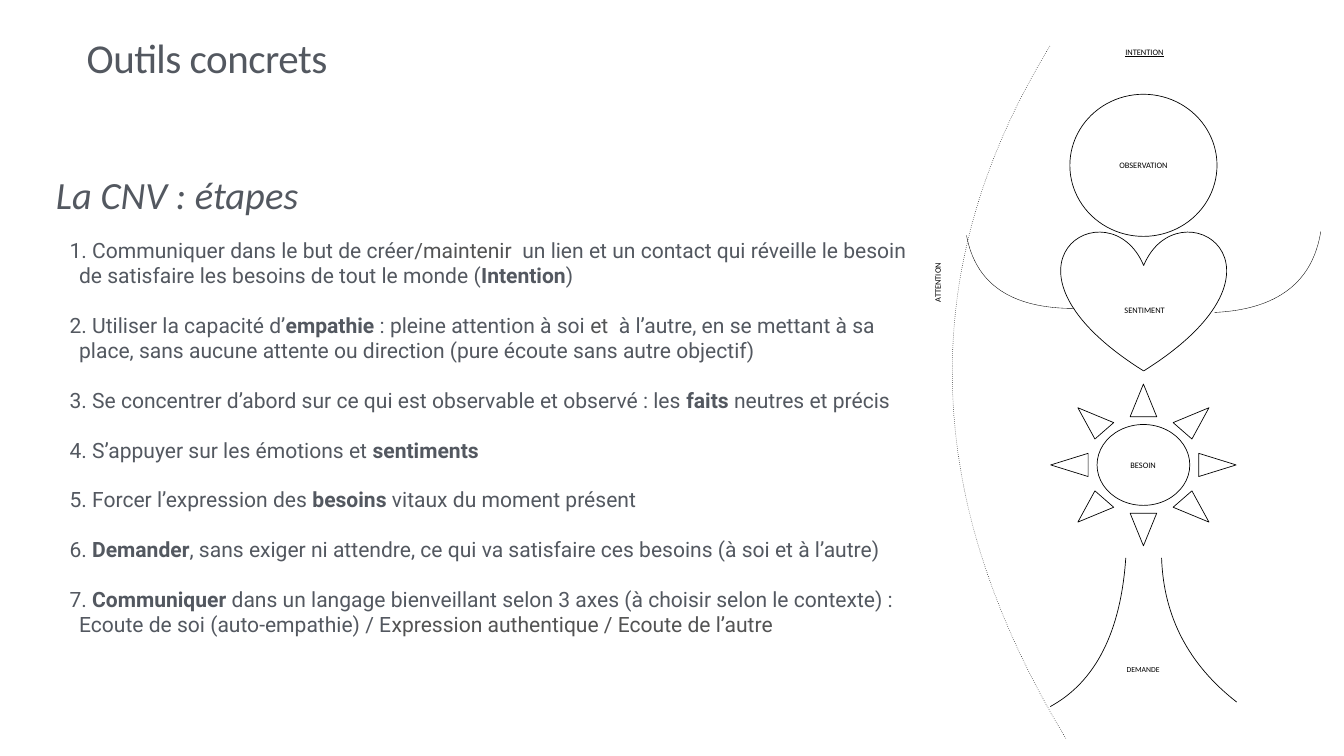
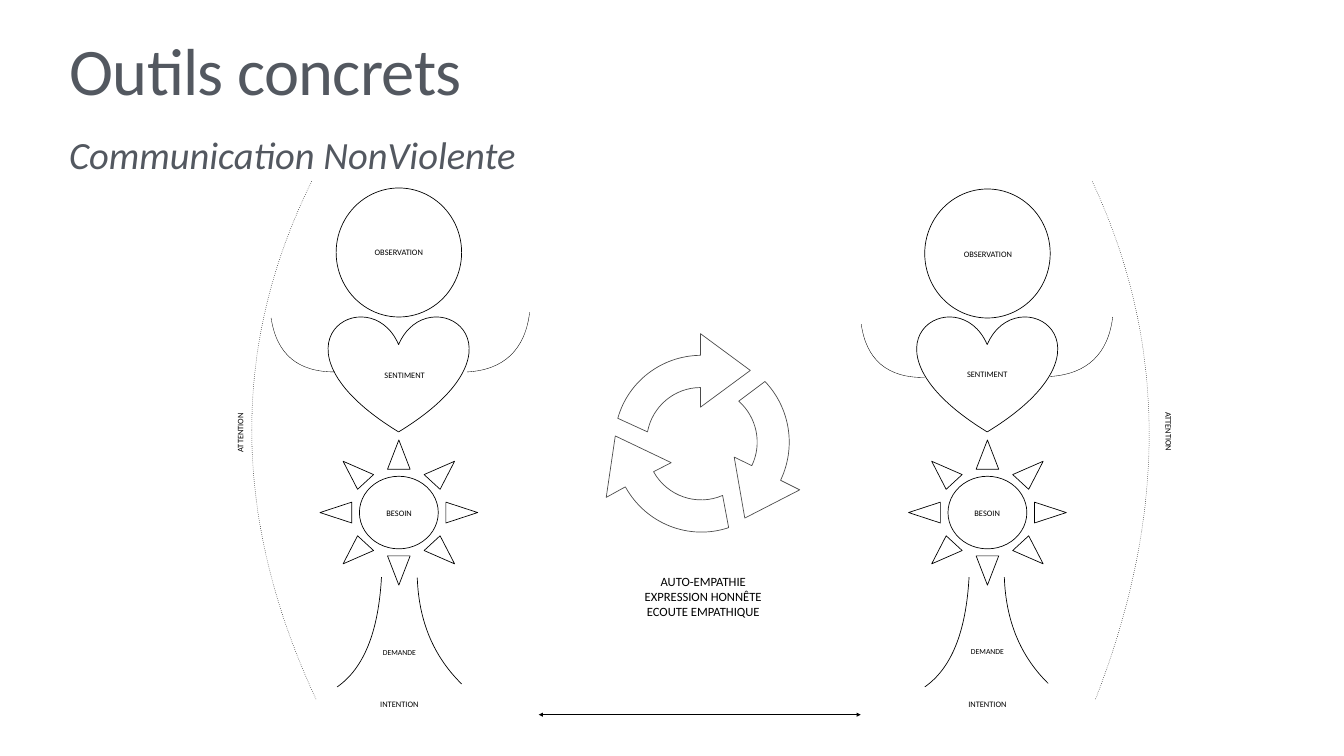
from lxml import etree
from pptx import Presentation
from pptx import util as u
from pptx.dml.color import RGBColor
from pptx.enum import shapes, text
from pptx.oxml.ns import qn

COLOURS = {"heading": "535860", "dark": "535353", "ink": "000000", "paper": "FFFFFF"}
BODY_STYLES = {"plain": ("heading", False), "bold": ("heading", True),
               "dark": ("dark", False), "ink": ("ink", False)}
CURVE_STEPS = 32


def add_text(slide, box, paragraphs, size, font="Calibri", inset=0.06, label=False):
    shape = slide.shapes.add_textbox(*map(u.Inches, box))
    frame = shape.text_frame
    frame.word_wrap = True
    frame.margin_left = frame.margin_right = u.Inches(inset)
    frame.margin_top = frame.margin_bottom = u.Inches(inset)
    frame.vertical_anchor = text.MSO_ANCHOR.MIDDLE if label else text.MSO_ANCHOR.TOP
    for index, runs in enumerate(paragraphs):
        paragraph = frame.paragraphs[0] if index == 0 else frame.add_paragraph()
        paragraph.alignment = text.PP_ALIGN.CENTER if label else text.PP_ALIGN.LEFT
        for wording, style in runs:
            colour, bold = BODY_STYLES[style]
            run = paragraph.add_run()
            run.text = wording
            run.font.name = font
            run.font.size = u.Pt(size)
            run.font.bold = bold
            run.font.color.rgb = RGBColor.from_string(COLOURS[colour])
    return shape


def add_outline(slide, contours, weight, closed=False):
    builder = None
    for start, *segments in contours:
        points = []
        pen = start
        for segment in segments:
            if len(segment) == 2:
                points.append(segment)
            else:
                knots = [pen, segment[:2], segment[2:4], segment[4:]]
                for step in range(1, CURVE_STEPS + 1):
                    t = step / CURVE_STEPS
                    weights = ((1 - t) ** 3, 3 * t * (1 - t) ** 2, 3 * t * t * (1 - t), t ** 3)
                    points.append(tuple(sum(w * knot[axis] for w, knot in zip(weights, knots))
                                        for axis in (0, 1)))
            pen = segment[-2:]
        corner = [u.Inches(value) for value in start]
        if builder is None:
            builder = slide.shapes.build_freeform(*corner, scale=1.0)
        else:
            builder.move_to(*corner)
        builder.add_line_segments([(u.Inches(x), u.Inches(y)) for x, y in points], close=closed)
    shape = builder.convert_to_shape()
    strokes = iter(list(shape._element.iter(qn("a:lnTo"))))
    for start, *segments in contours:
        for segment in segments:
            stroke = next(strokes)
            if len(segment) == 6:
                curve = etree.Element(qn("a:cubicBezTo"))
                for x, y in zip(segment[::2], segment[1::2]):
                    etree.SubElement(curve, qn("a:pt"), x=str(u.Inches(x) - shape.left),
                                     y=str(u.Inches(y) - shape.top))
                stroke.addprevious(curve)
                for spare in [stroke] + [next(strokes) for _ in range(CURVE_STEPS - 1)]:
                    spare.getparent().remove(spare)
    shape.shadow.inherit = False
    shape.fill.background()
    shape.line.color.rgb = RGBColor.from_string(COLOURS["ink"])
    shape.line.width = u.Pt(weight)
    return shape


presentation = Presentation()
presentation.slide_width = u.Inches(26.67)
presentation.slide_height = u.Inches(15)
steps_slide, exchange_slide = [
    presentation.slides.add_slide(presentation.slide_layouts[6]) for _ in range(2)]

headings = [
    (steps_slide, (1.66, 0.69, 23.69, 1.18), 58.6, -70,
     "La CNV : étapes", (1.06, 3.34, 24.03, 1.1)),
    (exchange_slide, (1.32, 0.69, 24.03, 1.85), 95, -100,
     "Communication NonViolente", (1.32, 2.55, 24.03, 1.1)),
]
for slide, title_box, title_size, tracking, subtitle, subtitle_box in headings:
    shape = add_text(slide, subtitle_box, [[(subtitle, "plain")]], 55, inset=0.05)
    shape.text_frame.paragraphs[0].runs[0].font.italic = True
    shape = add_text(slide, title_box, [[("Outils concrets", "plain")]], title_size)
    paragraph = shape.text_frame.paragraphs[0]
    paragraph.line_spacing = 0.9
    paragraph.runs[0].font._element.set("spc", str(tracking))

steps = [
    [(" Communiquer dans le but de créer", "plain"), ("/maintenir  ", "dark"),
     ("un lien et un contact qui réveille le besoin de satisfaire les besoins "
      "de tout le monde (", "plain"), ("Intention", "bold"), (")", "plain")],
    [(" Utiliser la capacité d’", "plain"), ("empathie", "bold"),
     (" : pleine attention à soi ", "plain"), ("et ", "dark"),
     (" à l’autre, en se mettant à sa place, sans aucune attente ou direction "
      "(pure écoute sans autre objectif)", "plain")],
    [(" Se concentrer d’abord sur ce qui est observable et observé : les ", "plain"),
     ("faits", "bold"), (" neutres et précis", "plain")],
    [(" S’appuyer sur les émotions et ", "plain"), ("sentiments", "bold")],
    [(" Forcer l’expression des ", "plain"), ("besoins ", "bold"),
     ("vitaux du moment présent", "plain")],
    [(" ", "plain"), ("Demander", "bold"),
     (", sans exiger ni attendre, ce qui va satisfaire ces besoins "
      "(à soi et à l’autre)", "plain")],
    [(" ", "plain"), ("Communiquer ", "bold"),
     ("dans un langage bienveillant selon 3 axes (à choisir selon le contexte) : "
      "Ecoute de soi (auto-empathie) / E", "plain"),
     ("xpression authentique / Ecoute de l’autre", "dark")],
]
shape = add_text(steps_slide, (1.32, 4.65, 16.89, 9.03), steps, 30.1, font="Roboto")
for paragraph in shape.text_frame.paragraphs:
    paragraph.space_before = u.Pt(34.9)
    properties = paragraph._p.get_or_add_pPr()
    properties.set("marL", str(u.Inches(0.19)))
    properties.set("indent", str(u.Inches(-0.19)))
    etree.SubElement(properties, qn("a:buAutoNum"), type="arabicPeriod")

figures = [
    {
        "slide": steps_slide,
        "head": (21.23, 1.87, 2.92, 2.82),
        "heart": (21.06, 4.57, 3.27, 2.79),
        "sun": (20.85, 7.62, 3.68, 3.21),
        "legs": [((20.84, 14.02), (21.74, 13.53, 22.24, 12.54, 22.34, 11.07)),
                 ((24.54, 13.93), (23.59, 13.19, 23.09, 12.24, 23.05, 11.07))],
        "arms": [((19.18, 4.67), (19.36, 5.64, 20.07, 6.12, 21.32, 6.12)),
                 ((24.1, 6.2), (25.35, 6.14, 26.05, 5.6, 26.21, 4.59))],
        "attention": ((21.15, 14.65), (18.25, 9.87, 18.15, 5.29, 20.85, 0.89)),
        "labels": {"OBSERVATION": (21.32, 3.15, 2.74, 0.27),
                   "SENTIMENT": (21.08, 6.02, 3.27, 0.27),
                   "BESOIN": (22.03, 9.09, 1.31, 0.27),
                   "DEMANDE": (21.66, 13.14, 2.05, 0.29),
                   "INTENTION": (21.17, 0.88, 3.08, 0.3),
                   "ATTENTION": (14.54, 5.47, 8.13, 0.27)},
        "turn": 270,
    },
    {
        "slide": exchange_slide,
        "head": (6.67, 3.73, 2.49, 2.56),
        "heart": (6.52, 6.26, 2.78, 2.31),
        "sun": (6.35, 8.73, 3.13, 2.88),
        "legs": [((6.69, 13.63), (7.22, 13.26, 7.51, 12.54, 7.57, 11.45)),
                 ((9.16, 13.57), (8.6, 13.02, 8.31, 12.32, 8.28, 11.46))],
        "arms": [((5.38, 6.31), (5.49, 7.03, 5.91, 7.38, 6.64, 7.38)),
                 ((9.27, 7.38), (10, 7.34, 10.42, 6.94, 10.51, 6.2))],
        "attention": ((6.27, 13.87), (4.6, 10.29, 4.57, 6.86, 6.19, 3.59)),
        "labels": {"OBSERVATION": (6.75, 4.87, 2.33, 0.27),
                   "SENTIMENT": (6.64, 7.3, 2.78, 0.27),
                   "BESOIN": (7.36, 10.04, 1.12, 0.27),
                   "DEMANDE": (7.05, 12.8, 1.75, 0.29),
                   "INTENTION": (6.63, 13.82, 2.59, 0.3),
                   "ATTENTION": (0.44, 8.45, 8.65, 0.27)},
        "turn": 270,
    },
    {
        "slide": exchange_slide,
        "head": (18.35, 3.75, 2.49, 2.56),
        "heart": (18.2, 6.26, 2.78, 2.31),
        "sun": (18.03, 8.73, 3.13, 2.88),
        "legs": [((18.35, 13.63), (18.88, 13.26, 19.17, 12.54, 19.23, 11.45)),
                 ((20.8, 13.56), (20.25, 13.02, 19.96, 12.32, 19.93, 11.45))],
        "arms": [((17.09, 6.43), (17.19, 7.14, 17.61, 7.5, 18.35, 7.49)),
                 ((20.84, 7.47), (21.57, 7.42, 21.99, 7.03, 22.08, 6.29))],
        "attention": ((21.74, 13.87), (23.18, 10.18, 23.16, 6.76, 21.67, 3.59)),
        "labels": {"OBSERVATION": (18.52, 4.9, 2.17, 0.27),
                   "SENTIMENT": (18.2, 7.28, 2.78, 0.27),
                   "BESOIN": (19.03, 10.04, 1.12, 0.27),
                   "DEMANDE": (18.72, 12.78, 1.75, 0.29),
                   "INTENTION": (18.3, 13.82, 2.59, 0.3),
                   "ATTENTION": (18.97, 8.43, 8.45, 0.27)},
        "turn": 89.3,
    },
]
body_parts = {"head": shapes.MSO_SHAPE.OVAL, "heart": shapes.MSO_SHAPE.HEART,
              "sun": shapes.MSO_SHAPE.SUN}
for figure in figures:
    slide = figure["slide"]
    for part, preset in body_parts.items():
        shape = slide.shapes.add_shape(preset, *map(u.Inches, figure[part]))
        shape.shadow.inherit = False
        shape.fill.solid()
        shape.fill.fore_color.rgb = RGBColor.from_string(COLOURS["paper"])
        shape.line.color.rgb = RGBColor.from_string(COLOURS["ink"])
        shape.line.width = u.Pt(1)
    for limbs, weight in (("legs", 1), ("arms", 0.5)):
        for limb in figure[limbs]:
            add_outline(slide, [limb], weight)
    shape = add_outline(slide, [figure["attention"]], 0.75)
    etree.SubElement(shape.line._ln, qn("a:prstDash"), val="dot")
    for wording, box in figure["labels"].items():
        size = 11 if wording == "DEMANDE" else 12
        shape = add_text(slide, box, [[(wording, "ink")]], size, inset=0.04, label=True)
        if wording == "ATTENTION":
            shape.rotation = figure["turn"]
        if wording == "INTENTION" and slide is steps_slide:
            shape.text_frame.paragraphs[0].runs[0].font.underline = True

cycle_arrows = [
    [(13.9, 6.62), (13.9, 7.05), (13.12, 7.06, 12.46, 7.58, 12.26, 8.3), (12.85, 8.57),
     (12.94, 8.07, 13.38, 7.69, 13.9, 7.69), (13.9, 8.08), (14.89, 7.35)],
    [(15.18, 7.57), (14.66, 7.96), (15.02, 8.28, 15.13, 8.8, 14.92, 9.24), (14.57, 9.07),
     (14.78, 10.28), (15.87, 9.72), (15.49, 9.53), (15.81, 8.86, 15.67, 8.08, 15.18, 7.57)],
    [(12.21, 8.65), (12.03, 9.87), (12.41, 9.66), (12.82, 10.4, 13.68, 10.73, 14.46, 10.47),
     (14.34, 9.83), (13.84, 10.05, 13.24, 9.85, 12.97, 9.36), (13.32, 9.18)],
]
cycle = add_outline(exchange_slide, cycle_arrows, 1, closed=True)
line_colour = cycle.line._ln.find(".//" + qn("a:srgbClr"))
etree.SubElement(line_colour, qn("a:alpha"), val="71000")

axes = ["AUTO-EMPATHIE", "EXPRESSION HONNÊTE", "ECOUTE EMPATHIQUE"]
add_text(exchange_slide, (11.1, 11.33, 5.71, 1.02), [[(axis, "ink")] for axis in axes],
         18, label=True)

connector = exchange_slide.shapes.add_connector(
    shapes.MSO_CONNECTOR.STRAIGHT, *map(u.Inches, (10.69, 14.18, 17.08, 14.18)))
connector.line.color.rgb = RGBColor.from_string(COLOURS["ink"])
connector.line.width = u.Pt(0.5)
for end in ("a:headEnd", "a:tailEnd"):
    etree.SubElement(connector.line._ln, qn(end), type="triangle")
etree.SubElement(connector._element.spPr, qn("a:effectLst"))

presentation.save("out.pptx")
